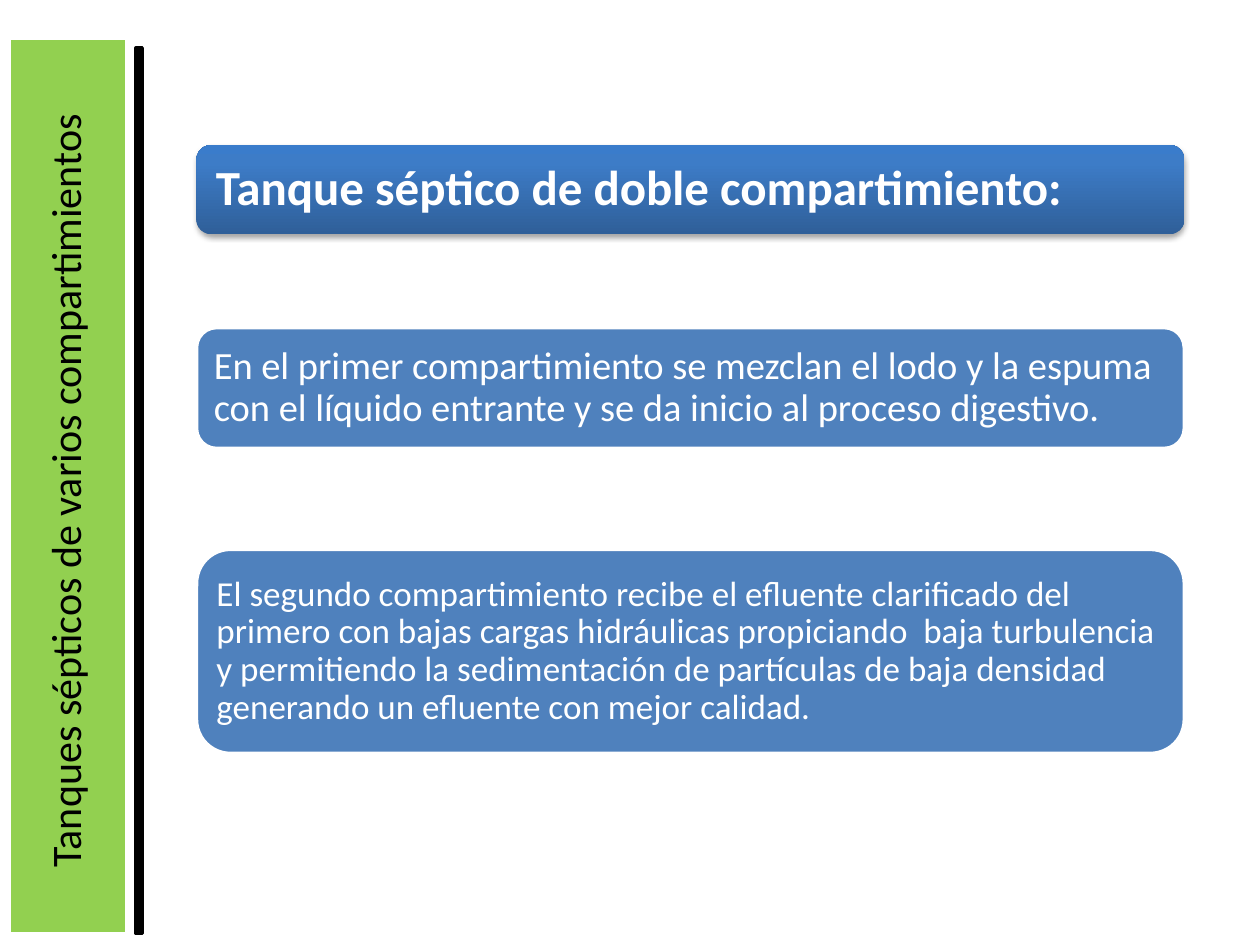
from dataclasses import dataclass

from lxml.etree import SubElement
from pptx import Presentation
from pptx.dml.color import RGBColor
from pptx.enum.shapes import MSO_SHAPE
from pptx.enum.text import MSO_ANCHOR, MSO_AUTO_SIZE, PP_ALIGN
from pptx.oxml import parse_xml
from pptx.oxml.ns import nsdecls, qn
from pptx.shapes.autoshape import Shape
from pptx.slide import Slide
from pptx.util import Inches, Pt

WHITE = RGBColor(0xFF, 0xFF, 0xFF)
BLACK = RGBColor(0x00, 0x00, 0x00)
GREEN = RGBColor(0x92, 0xD0, 0x50)
BLUE = RGBColor(0x4F, 0x81, 0xBD)
GRADIENT = (
    (0, RGBColor(0x2F, 0x5F, 0x99)),
    (80, RGBColor(0x3D, 0x7C, 0xC7)),
    (100, RGBColor(0x3A, 0x7C, 0xCB)),
)
FONT = "Calibri"
CARD_LEFT, CARD_WIDTH = 1.56, 7.84


@dataclass(frozen=True)
class Bar:
    left: float
    top: float
    width: float
    height: float
    fill: RGBColor
    line: RGBColor


@dataclass(frozen=True)
class Card:
    text: str
    top: float
    height: float
    margin: float
    size: int
    heading: bool = False


BARS = (
    Bar(0.07, 0.3, 0.94, 7.11, GREEN, WHITE),
    Bar(1.08, 0.38, 0.05, 7.03, BLACK, BLACK),
)
CARDS = (
    Card("Tanque séptico de doble compartimiento:", 1.15, 0.71, 0.12, 28, heading=True),
    Card(
        "En el primer compartimiento se mezclan el lodo y la espuma con el "
        "líquido entrante y se da inicio al proceso digestivo.",
        2.6, 0.96, 0.09, 22,
    ),
    Card(
        "El segundo compartimiento recibe el efluente clarificado del primero "
        "con bajas cargas hidráulicas propiciando  baja turbulencia y permitiendo "
        "la sedimentación de partículas de baja densidad generando un efluente "
        "con mejor calidad.",
        4.36, 1.62, 0.08, 20,
    ),
)


def paint(shape: Shape, fill: RGBColor, line: RGBColor) -> None:
    shape.shadow.inherit = False
    shape.fill.solid()
    shape.fill.fore_color.rgb = fill
    shape.line.color.rgb = line
    shape.line.width = Pt(2)


def paint_heading(shape: Shape) -> None:
    """Give the heading its vertical gradient and soft shadow, without outline."""
    shape.fill.gradient()
    shape.fill.gradient_angle = 90
    stops = shape._element.spPr.find(qn("a:gradFill")).find(qn("a:gsLst"))
    for stop in list(stops):
        stops.remove(stop)
    for percent, color in GRADIENT:
        stop = SubElement(stops, qn("a:gs"), pos=str(percent * 1000))
        SubElement(stop, qn("a:srgbClr"), val=str(color))
    shape.line.fill.background()
    shape._element.spPr.append(parse_xml(
        f'<a:effectLst {nsdecls("a")}>'
        f'<a:outerShdw blurRad="{Pt(3.1)}" dist="{Pt(1.8)}" dir="5400000" rotWithShape="0">'
        '<a:srgbClr val="000000"><a:alpha val="35000"/></a:srgbClr>'
        '</a:outerShdw></a:effectLst>'
    ))


def add_bar(slide: Slide, bar: Bar) -> None:
    shape = slide.shapes.add_shape(
        MSO_SHAPE.RECTANGLE,
        Inches(bar.left), Inches(bar.top), Inches(bar.width), Inches(bar.height),
    )
    paint(shape, bar.fill, bar.line)


def add_card(slide: Slide, card: Card) -> None:
    shape = slide.shapes.add_shape(
        MSO_SHAPE.ROUNDED_RECTANGLE,
        Inches(CARD_LEFT), Inches(card.top), Inches(CARD_WIDTH), Inches(card.height),
    )
    if card.heading:
        paint_heading(shape)
    else:
        paint(shape, BLUE, WHITE)

    frame = shape.text_frame
    frame.word_wrap = True
    frame.vertical_anchor = MSO_ANCHOR.MIDDLE
    frame.margin_left = frame.margin_right = Inches(card.margin)
    frame.margin_top = frame.margin_bottom = Inches(card.margin)
    paragraph = frame.paragraphs[0]
    paragraph.text = card.text
    paragraph.alignment = PP_ALIGN.LEFT
    paragraph.line_spacing = 0.9
    paragraph.font.name = FONT
    paragraph.font.size = Pt(card.size)
    paragraph.font.bold = card.heading
    paragraph.font.color.rgb = WHITE


def place_title(slide: Slide, text: str) -> None:
    """Turn the title to read upwards and bring it in front of the bars."""
    title = slide.shapes.title
    title.left, title.top = Inches(-2.52), Inches(3.34)
    title.width, title.height = Inches(6.67), Inches(1.11)
    title.rotation = 270
    frame = title.text_frame
    frame.word_wrap = True
    frame.auto_size = MSO_AUTO_SIZE.NONE
    frame.vertical_anchor = MSO_ANCHOR.TOP
    paragraph = frame.paragraphs[0]
    paragraph.text = text
    paragraph.alignment = PP_ALIGN.CENTER
    paragraph.font.name = FONT
    paragraph.font.size = Pt(24)
    paragraph.font.color.rgb = BLACK
    slide.shapes._spTree.append(title._element)


def main() -> None:
    presentation = Presentation()
    presentation.slide_width, presentation.slide_height = Inches(10), Inches(7.5)
    slide = presentation.slides.add_slide(presentation.slide_layouts[5])
    for bar in BARS:
        add_bar(slide, bar)
    place_title(slide, "Tanques sépticos de varios compartimientos")
    for card in CARDS:
        add_card(slide, card)
    presentation.save("out.pptx")


if __name__ == "__main__":
    main()
